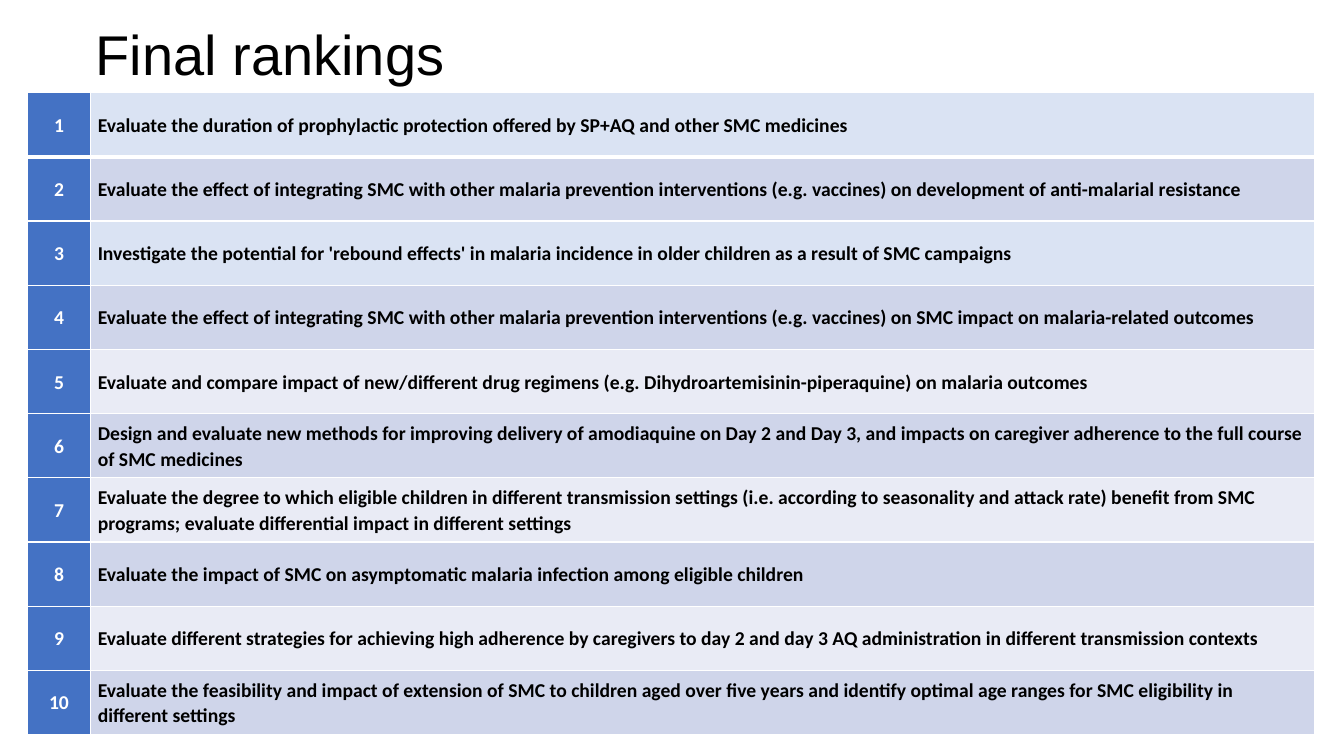
"""Build the slide that lists the final research priority rankings."""
from lxml import etree
from pptx import Presentation
from pptx import util as u
from pptx.dml.color import RGBColor
from pptx.enum import text
from pptx.oxml import ns

COLOURS = {
    "black": "000000",
    "white": "FFFFFF",
    "rank": "4472C4",
    "highlight": "DAE3F3",
    "odd": "E9EBF5",
    "even": "CFD5EA",
}
HIGHLIGHTED_RANKS = (1, 3)
PRIORITIES = [
    "Evaluate the duration of prophylactic protection offered by SP+AQ and other SMC medicines",
    "Evaluate the effect of integrating SMC with other malaria prevention interventions "
    "(e.g. vaccines) on development of anti-malarial resistance",
    "Investigate the potential for 'rebound effects' in malaria incidence in older children "
    "as a result of SMC campaigns",
    "Evaluate the effect of integrating SMC with other malaria prevention interventions "
    "(e.g. vaccines) on SMC impact on malaria-related outcomes",
    "Evaluate and compare impact of new/different drug regimens "
    "(e.g. Dihydroartemisinin-piperaquine) on malaria outcomes",
    "Design and evaluate new methods for improving delivery of amodiaquine on Day 2 and Day 3, "
    "and impacts on caregiver adherence to the full course of SMC medicines",
    "Evaluate the degree to which eligible children in different transmission settings "
    "(i.e. according to seasonality and attack rate) benefit from SMC programs; "
    "evaluate differential impact in different settings",
    "Evaluate the impact of SMC on asymptomatic malaria infection among eligible children",
    "Evaluate different strategies for achieving high adherence by caregivers to day 2 and day 3 "
    "AQ administration in different transmission contexts",
    "Evaluate the feasibility and impact of extension of SMC to children aged over five years "
    "and identify optimal age ranges for SMC eligibility in different settings",
]


def colour(name):
    """Return the named colour."""
    return RGBColor.from_string(COLOURS[name])


def add_run(paragraph, words, size, font, colour_name, bold=False):
    """Add one formatted run to a paragraph."""
    run = paragraph.add_run()
    run.text = words
    run.font.size = u.Pt(size)
    run.font.name = font
    run.font.bold = bold
    run.font.color.rgb = colour(colour_name)


def set_borders(cell, widths):
    """Draw white cell borders from a dict of side letters and point widths."""
    properties = cell._tc.get_or_add_tcPr()
    for side, width in widths.items():
        line = etree.SubElement(properties, ns.qn(f"a:ln{side}"), w=str(u.Pt(width)))
        fill = etree.SubElement(line, ns.qn("a:solidFill"))
        etree.SubElement(fill, ns.qn("a:srgbClr"), val=COLOURS["white"])


def fill_cell(cell, words, fill_name, font_colour, alignment, borders):
    """Format one table cell and write its text."""
    set_borders(cell, borders)
    cell.fill.solid()
    cell.fill.fore_color.rgb = colour(fill_name)
    cell.vertical_anchor = text.MSO_ANCHOR.MIDDLE
    cell.margin_left = cell.margin_right = u.Inches(0.07)
    cell.margin_top = cell.margin_bottom = 0
    paragraph = cell.text_frame.paragraphs[0]
    paragraph.alignment = alignment
    paragraph.line_spacing = 1.07
    paragraph.space_after = u.Pt(8)
    add_run(paragraph, words, 14, "Calibri", font_colour, bold=True)


def priority_fill(rank):
    """Choose the row colour for a rank."""
    if rank in HIGHLIGHTED_RANKS:
        return "highlight"
    return "odd" if rank % 2 else "even"


def add_title(slide, words):
    """Place and format the slide title."""
    title = slide.shapes.title
    title.left, title.top = u.Inches(0.85), u.Inches(0.21)
    title.width, title.height = u.Inches(11.03), u.Inches(0.71)
    frame = title.text_frame
    frame.auto_size = text.MSO_AUTO_SIZE.NONE
    frame.vertical_anchor = text.MSO_ANCHOR.MIDDLE
    paragraph = frame.paragraphs[0]
    paragraph.alignment = text.PP_ALIGN.LEFT
    paragraph.line_spacing = 0.9
    add_run(paragraph, words, 40, "Arial", "black")


def add_rankings(slide, priorities):
    """Add the table of ranked priorities."""
    table = slide.shapes.add_table(
        len(priorities), 2, u.Inches(0.27), u.Inches(0.92), u.Inches(12.77), u.Inches(6.37)
    ).table
    for column, width in zip(table.columns, (0.63, 12.14)):
        column.width = u.Inches(width)
    for rank, priority in enumerate(priorities, start=1):
        borders = {"L": 1, "R": 1, "T": 3 if rank == 2 else 1, "B": 3 if rank == 1 else 1}
        rank_cell, priority_cell = table.rows[rank - 1].cells
        fill_cell(rank_cell, str(rank), "rank", "white", text.PP_ALIGN.CENTER, borders)
        fill_cell(priority_cell, priority, priority_fill(rank), "black",
                  text.PP_ALIGN.LEFT, borders)


def main():
    """Create and save the presentation."""
    presentation = Presentation()
    presentation.slide_width = u.Inches(13.33)
    presentation.slide_height = u.Inches(7.5)
    slide = presentation.slides.add_slide(presentation.slide_layouts.get_by_name("Title Only"))
    add_title(slide, "Final rankings")
    add_rankings(slide, PRIORITIES)
    presentation.save("out.pptx")


if __name__ == "__main__":
    main()
